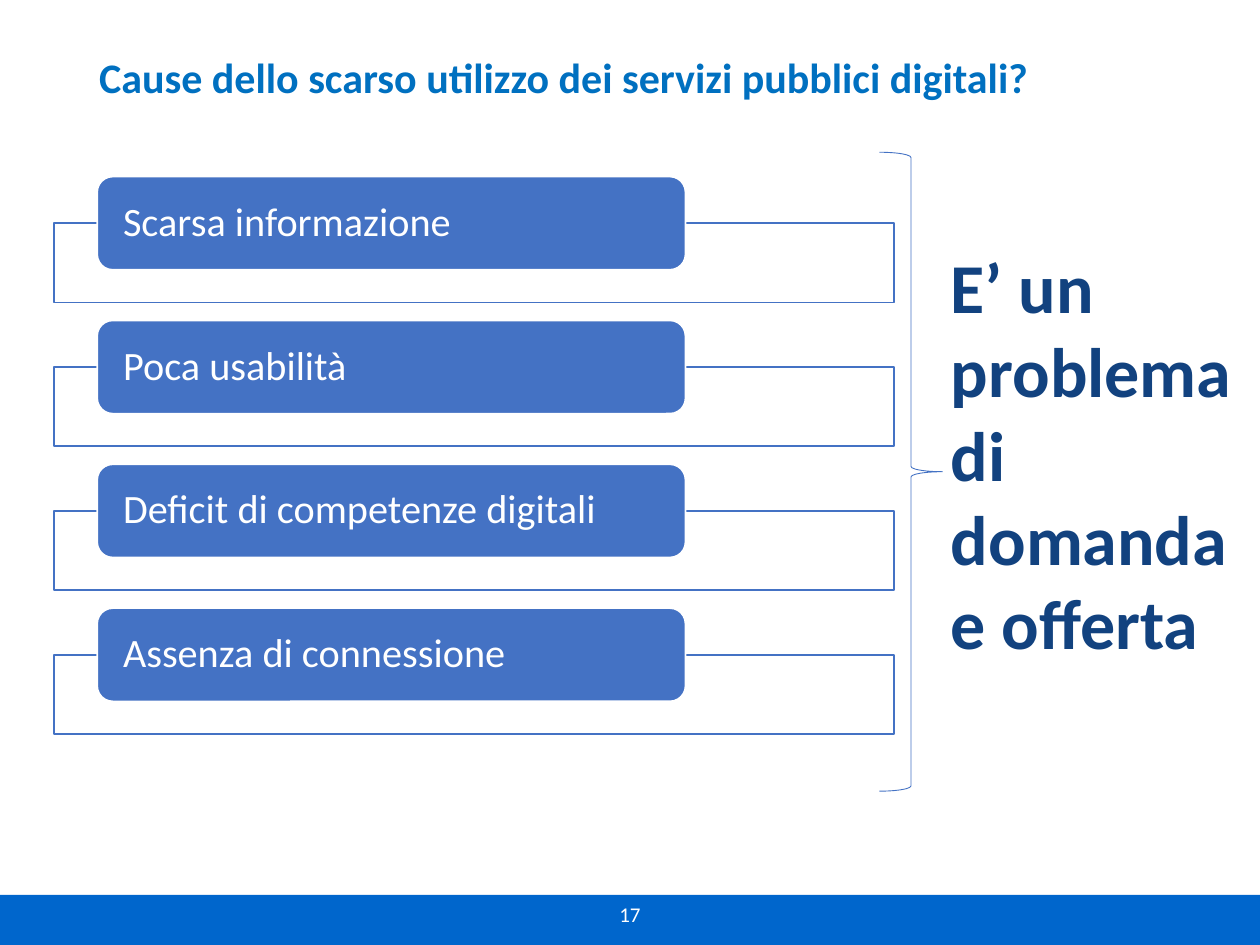
from lxml import etree
from pptx import Presentation, util as u
from pptx.dml import color
from pptx.enum import shapes, text
from pptx.oxml import ns

HUES = {"bar": "0066CC", "title": "0070C0", "blue": "4472C4",
        "navy": "12427F", "white": "FFFFFF", "black": "000000"}
CAUSES = ["Scarsa informazione", "Poca usabilità",
          "Deficit di competenze digitali", "Assenza di connessione"]
STEP = 2.9
KIND = shapes.MSO_SHAPE


def rgb(name):
    return color.RGBColor.from_string(HUES[name])


def box(at):
    return [u.Cm(n) for n in at]


def add_run(par, words, size, hue, bold=False):
    run = par.add_run()
    run.text = words
    font = run.font
    font.name, font.size, font.bold = "Calibri", u.Pt(size), bold
    font.color.rgb = rgb(hue)
    return run


def add_form(slide, kind, at, fill=None, line=None, width=1):
    form = slide.shapes.add_shape(kind, *box(at))
    form.shadow.inherit = False
    if fill:
        form.fill.solid()
        form.fill.fore_color.rgb = rgb(fill)
    else:
        form.fill.background()
    if line:
        form.line.color.rgb = rgb(line)
        form.line.width = u.Pt(width)
    else:
        form.line.fill.background()
    return form


def add_label(slide, at, words, size, hue, bold=False, align="LEFT", lead=1.0):
    frame = slide.shapes.add_textbox(*box(at)).text_frame
    frame.word_wrap = True
    par = frame.paragraphs[0]
    par.alignment = getattr(text.PP_ALIGN, align)
    par.line_spacing = lead
    return add_run(par, words, size, hue, bold)


def add_alpha(node, share):
    etree.SubElement(node, ns.qn("a:alpha"), val=str(share * 1000))


def add_glow(run):
    fill = run.font._element.find(ns.qn("a:solidFill"))
    glow = etree.Element(ns.qn("a:effectLst"))
    cast = etree.SubElement(glow, ns.qn("a:outerShdw"), blurRad="38100",
                            dist="38100", dir="2700000", algn="tl")
    tint = etree.SubElement(cast, ns.qn("a:srgbClr"), val=HUES["black"])
    add_alpha(tint, 43)
    fill.addnext(glow)


def add_cause(slide, row, words):
    drop = row * STEP
    frame = add_form(slide, KIND.RECTANGLE, (1.09, 4.5 + drop, 16.94, 1.6),
                     "white", "blue")
    add_alpha(frame._element.spPr.find(".//" + ns.qn("a:srgbClr")), 90)
    pill = add_form(slide, KIND.ROUNDED_RECTANGLE,
                    (1.96, 3.56 + drop, 11.86, 1.88), "blue", "white")
    body = pill.text_frame
    body.word_wrap = True
    body.vertical_anchor = text.MSO_ANCHOR.MIDDLE
    body.margin_left = body.margin_right = u.Cm(0.43)
    body.margin_top = body.margin_bottom = 0
    par = body.paragraphs[0]
    par.alignment = text.PP_ALIGN.LEFT
    par.line_spacing = 0.9
    add_run(par, words, 23, "white")


def main():
    deck = Presentation()
    deck.slide_width, deck.slide_height = u.Cm(25.4), u.Cm(19.05)
    slide = deck.slides.add_slide(deck.slide_layouts[6])
    add_form(slide, KIND.RECTANGLE, (0, 18.04, 25.45, 1.01), "bar")
    add_label(slide, (0, 18.04, 25.4, 0.77), "17", 12, "white", align="CENTER")
    add_label(slide, (1.75, 1.02, 21.9, 2.06),
              "Cause dello scarso utilizzo dei servizi pubblici digitali?",
              24, "title", bold=True, lead=0.9)
    for row, words in enumerate(CAUSES):
        add_cause(slide, row, words)
    add_glow(add_label(slide, (18.92, 4.78, 6.48, 8.81),
                       "E’ un problema di domanda e offerta",
                       40, "navy", bold=True))
    add_form(slide, KIND.RIGHT_BRACE, (17.73, 3.07, 1.27, 12.88),
             line="blue", width=0.5)
    deck.save("out.pptx")


if __name__ == "__main__":
    main()
